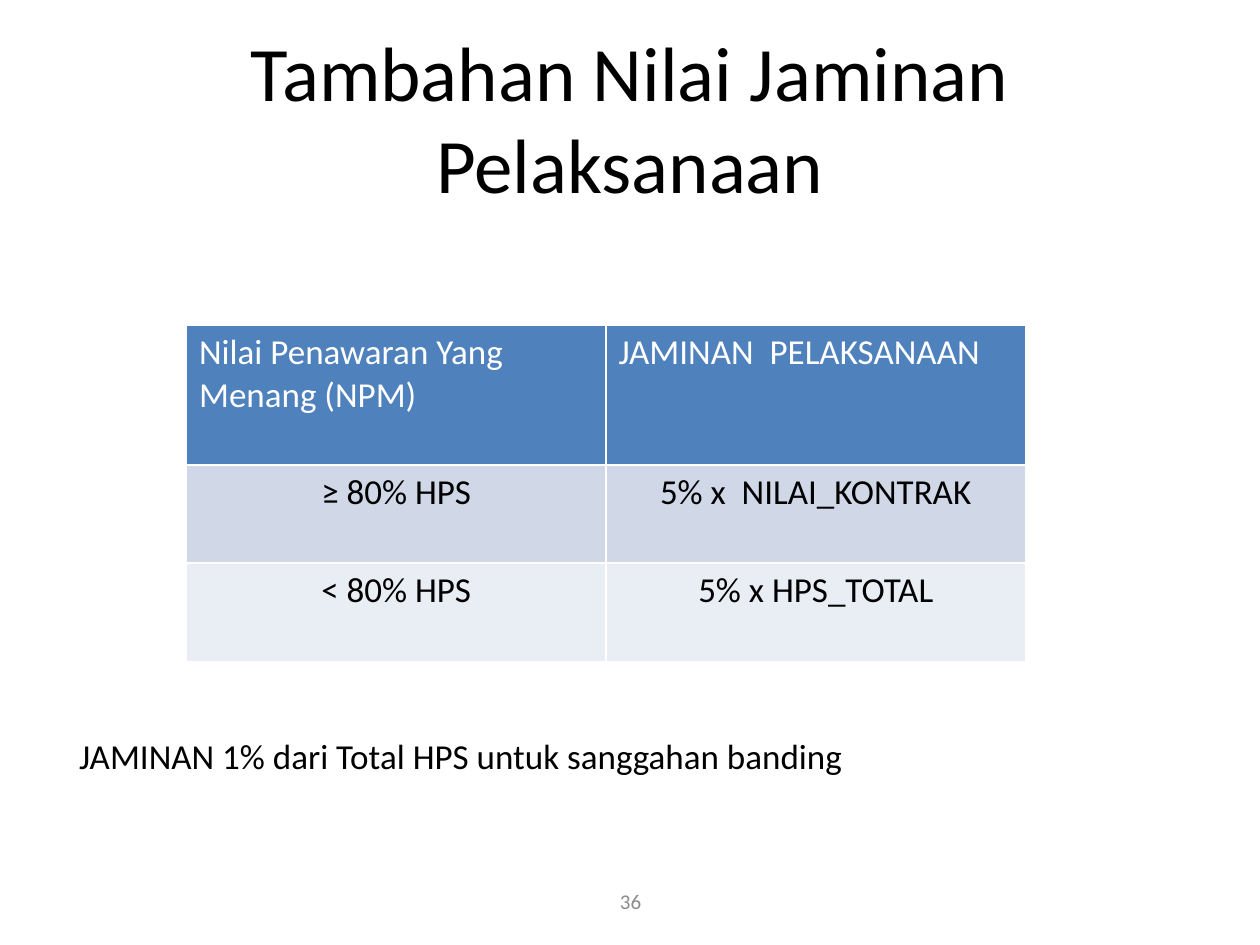
import pptx
import pptx.dml.color
import pptx.enum.text
import pptx.oxml
import pptx.oxml.ns
import pptx.util
from lxml import etree

Inches, Pt = pptx.util.Inches, pptx.util.Pt
RGBColor = pptx.dml.color.RGBColor
PP_ALIGN, MSO_ANCHOR = pptx.enum.text.PP_ALIGN, pptx.enum.text.MSO_ANCHOR
qn = pptx.oxml.ns.qn

COLORS = {
    "text": "000000",
    "white": "FFFFFF",
    "number": "8C8C8C",
    "header": "4F81BD",
    "band_dark": "D0D8E8",
    "band_light": "E9EDF4",
}


def write(tf, text, size, color, align):
    """Put one styled paragraph in a text frame and return it."""
    p = tf.paragraphs[0]
    p.text = text
    p.alignment = align
    p.font.name = "Calibri"
    p.font.size = Pt(size)
    p.font.color.rgb = RGBColor.from_string(COLORS[color])
    return p


def add_borders(cell, color, width):
    tcPr = cell._tc.get_or_add_tcPr()
    for i, side in enumerate(("lnL", "lnR", "lnT", "lnB")):
        ln = etree.Element(qn("a:" + side), w=str(Pt(width)))
        fill = etree.SubElement(ln, qn("a:solidFill"))
        etree.SubElement(fill, qn("a:srgbClr"), val=COLORS[color])
        tcPr.insert(i, ln)


prs = pptx.Presentation()
prs.slide_width, prs.slide_height = Inches(10), Inches(7.5)
s = prs.slides.add_slide(prs.slide_layouts[6])

# Title, note and page number
texts = [
    ("Tambahan Nilai Jaminan Pelaksanaan", (0.5, 0.3, 9, 1.25),
     44, "text", PP_ALIGN.CENTER, MSO_ANCHOR.MIDDLE),
    ("JAMINAN 1% dari Total HPS untuk sanggahan banding", (0.53, 5.78, 9.08, 1.33),
     20, "text", PP_ALIGN.LEFT, MSO_ANCHOR.TOP),
    ("36", (3.42, 6.95, 3.17, 0.4),
     12, "number", PP_ALIGN.CENTER, MSO_ANCHOR.MIDDLE),
]
for text, box, size, color, align, anchor in texts:
    tf = s.shapes.add_textbox(*map(Inches, box)).text_frame
    tf.word_wrap = True
    tf.vertical_anchor = anchor
    p = write(tf, text, size, color, align)
    if align == PP_ALIGN.LEFT:
        p.space_before = Pt(4)
        pPr = p._p.get_or_add_pPr()
        pPr.set("marL", str(Inches(0.38)))
        pPr.set("indent", str(-Inches(0.38)))

# Guarantee table: cell texts, row height, fill, font colour, alignment
rows = [
    (("Nilai Penawaran Yang Menang (NPM)", "JAMINAN  PELAKSANAAN"),
     1.11, "header", "white", PP_ALIGN.LEFT),
    (("≥ 80% HPS", "5% x  NILAI_KONTRAK"),
     0.78, "band_dark", "text", PP_ALIGN.CENTER),
    (("< 80% HPS", "5% x HPS_TOTAL"),
     0.78, "band_light", "text", PP_ALIGN.CENTER),
]
table = s.shapes.add_table(len(rows), 2, Inches(1.48), Inches(2.58),
                           Inches(6.66), Inches(2.67)).table
for r, (labels, height, fill, color, align) in enumerate(rows):
    table.rows[r].height = Inches(height)
    for c, label in enumerate(labels):
        cell = table.cell(r, c)
        cell.fill.solid()
        cell.fill.fore_color.rgb = RGBColor.from_string(COLORS[fill])
        p = write(cell.text_frame, label, 20, color, align)
        p.font.bold = False
        add_borders(cell, "white", 1)

prs.save("out.pptx")
